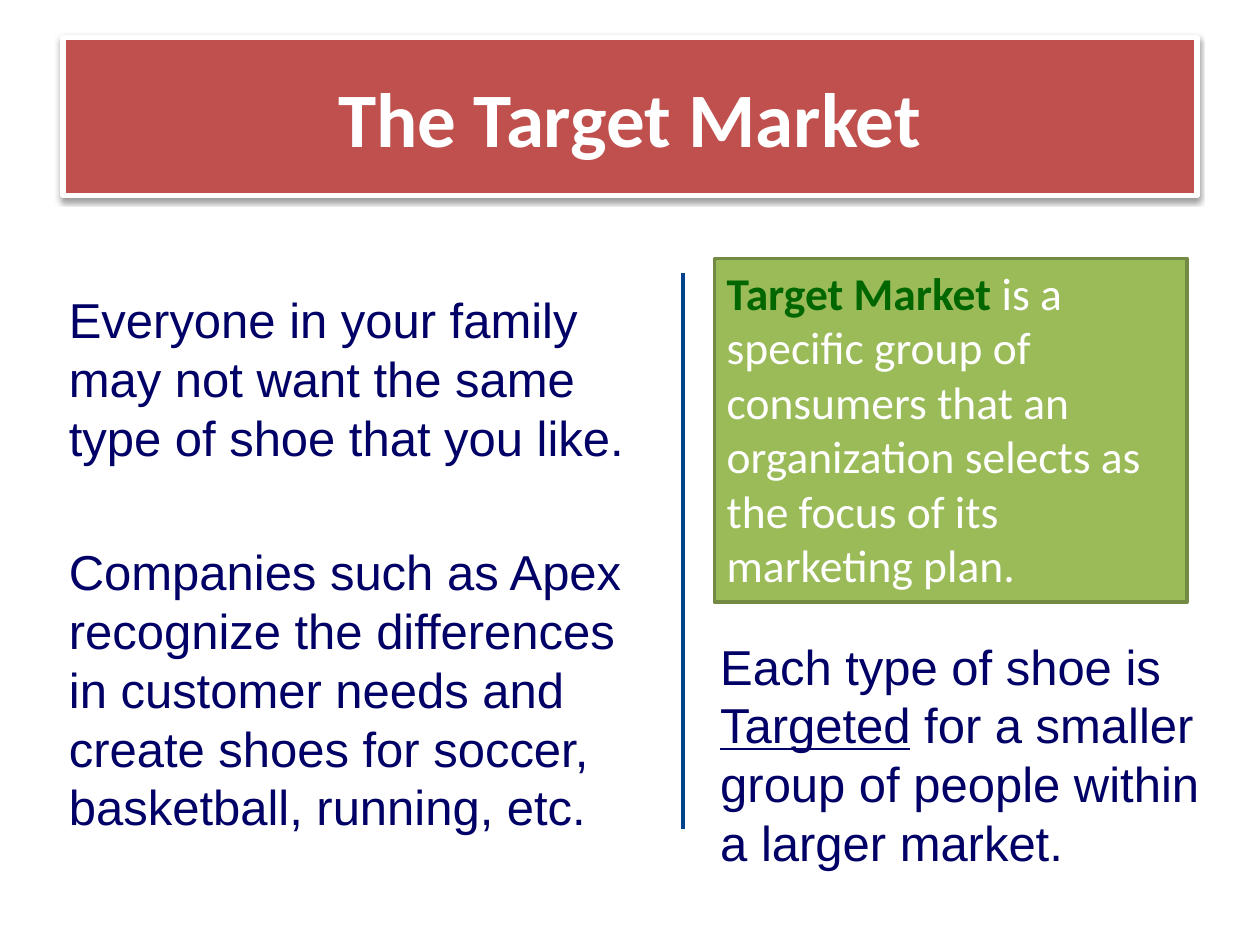
from lxml.etree import SubElement
from pptx import Presentation
from pptx.dml.color import RGBColor
from pptx.enum.shapes import MSO_CONNECTOR, MSO_SHAPE
from pptx.enum.text import MSO_ANCHOR, MSO_AUTO_SIZE, PP_ALIGN
from pptx.oxml.ns import qn
from pptx.util import Cm, Pt

WHITE, NAVY, GREEN = "FFFFFF", "000066", "006600"


def color(hex_code):
    return RGBColor.from_string(hex_code)


def set_font(font, name, size, hex_code, bold=False):
    font.name = name
    font.size = Pt(size)
    font.bold = bold
    font.color.rgb = color(hex_code)


def paint(shape, fill, line, line_width):
    shape.shadow.inherit = False
    shape.fill.solid()
    shape.fill.fore_color.rgb = color(fill)
    shape.line.color.rgb = color(line)
    shape.line.width = Pt(line_width)


def add_soft_shadow(shape):
    """Fill the shape's empty effect list with a shadow that falls downwards."""
    effects = shape._element.spPr.find(qn("a:effectLst"))
    shadow = SubElement(effects, qn("a:outerShdw"), blurRad=str(Pt(3.1)),
                        dist=str(Pt(1.6)), dir="5400000", rotWithShape="0")
    black = SubElement(shadow, qn("a:srgbClr"), val="000000")
    SubElement(black, qn("a:alpha"), val="38000")


def format_title(title, text):
    title.left, title.top, title.width, title.height = Cm(1.27), Cm(0.76), Cm(22.86), Cm(3.18)
    paint(title, "C0504D", WHITE, 3)
    add_soft_shadow(title)
    title.text_frame.text = text
    title.text_frame.vertical_anchor = MSO_ANCHOR.MIDDLE
    paragraph = title.text_frame.paragraphs[0]
    paragraph.alignment = PP_ALIGN.CENTER
    set_font(paragraph.font, "Calibri", 44, WHITE, bold=True)


def add_statement(slide, left, top, width, height, before, underlined="", after=""):
    box = slide.shapes.add_textbox(Cm(left), Cm(top), Cm(width), Cm(height))
    box.text_frame.word_wrap = True
    paragraph = box.text_frame.paragraphs[0]
    paragraph._p.get_or_add_pPr().set("marL", str(Cm(0.3)))
    paragraph.line_spacing = Pt(33.6)
    set_font(paragraph.font, "Arial", 28, NAVY)
    paragraph.add_run().text = before
    if underlined:
        run = paragraph.add_run()
        run.text = underlined
        run.font.underline = True
        paragraph.add_run().text = after


def add_definition(slide, term, meaning):
    box = slide.shapes.add_shape(MSO_SHAPE.RECTANGLE, Cm(14.4), Cm(5.21), Cm(9.53), Cm(6.93))
    paint(box, "9BBB59", "738A42", 2)
    frame = box.text_frame
    frame.word_wrap = True
    frame.auto_size = MSO_AUTO_SIZE.SHAPE_TO_FIT_TEXT
    frame.vertical_anchor = MSO_ANCHOR.TOP
    paragraph = frame.paragraphs[0]
    paragraph.alignment = PP_ALIGN.LEFT
    for text, hex_code, bold in ((term, GREEN, True), (meaning, WHITE, False)):
        run = paragraph.add_run()
        run.text = text
        set_font(run.font, "Calibri", 26, hex_code, bold)


def add_divider(slide, x, top, bottom):
    divider = slide.shapes.add_connector(MSO_CONNECTOR.STRAIGHT, Cm(x), Cm(top), Cm(x), Cm(bottom))
    divider.line.color.rgb = color("01428D")
    divider.line.width = Pt(2.25)
    SubElement(divider._element.spPr, qn("a:effectLst"))


def main():
    presentation = Presentation()
    presentation.slide_width, presentation.slide_height = Cm(25.4), Cm(19.05)
    slide = presentation.slides.add_slide(presentation.slide_layouts[5])

    format_title(slide.shapes.title, "The Target Market")
    add_statement(slide, 0.84, 5.72, 12.9, 3.81,
                  "Everyone in your family may not want the same type of shoe that you like.")
    add_divider(slide, 13.77, 5.51, 16.71)
    add_definition(slide, "Target Market ",
                   "is a specific group of consumers that an organization selects "
                   "as the focus of its marketing plan.")
    add_statement(slide, 0.84, 10.8, 12.7, 6.15,
                  "Companies such as Apex recognize the differences in customer needs "
                  "and create shoes for soccer, basketball, running, etc.")
    add_statement(slide, 13.97, 12.7, 10.8, 5.08, "Each type of shoe is ", "Targeted",
                  " for a smaller group of people within a larger market.")

    presentation.save("out.pptx")


if __name__ == "__main__":
    main()
